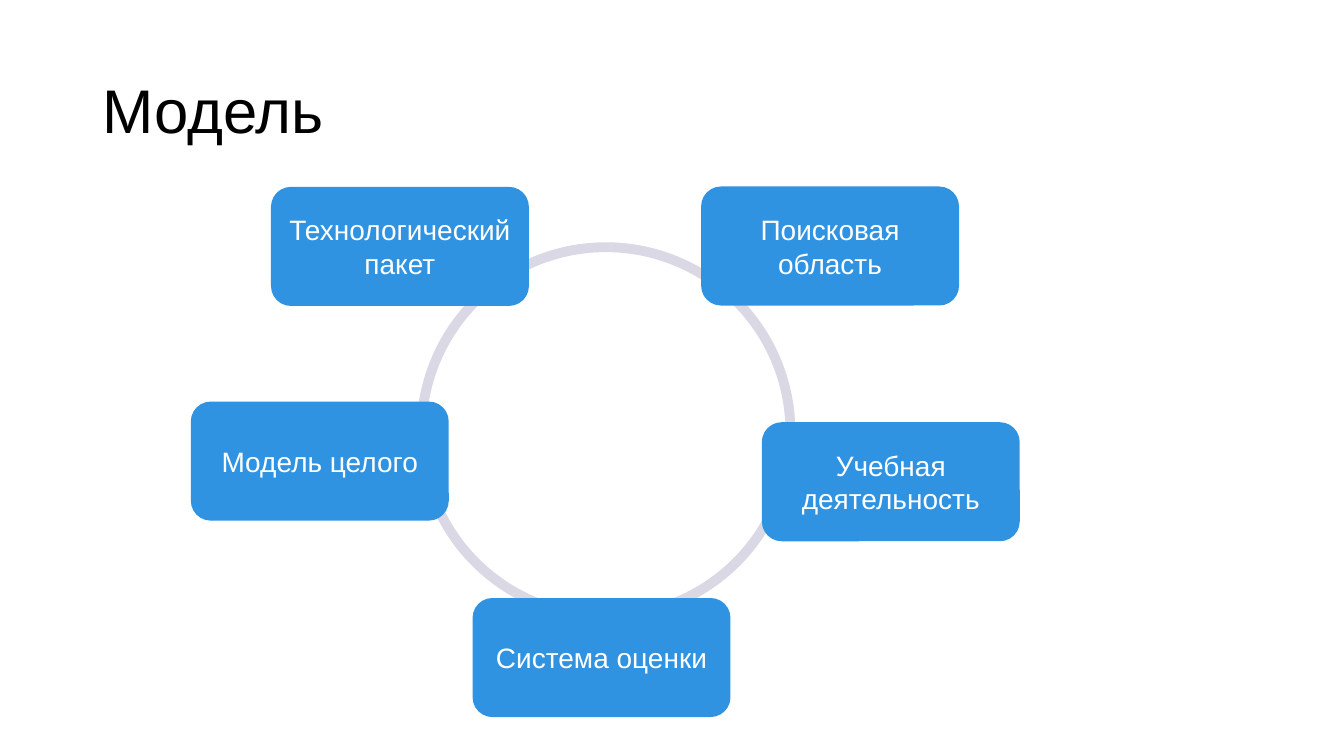
from pptx import Presentation
from pptx.dml.color import RGBColor
from pptx.enum.shapes import MSO_SHAPE
from pptx.enum.text import MSO_ANCHOR, PP_ALIGN
from pptx.util import Cm, Pt

ROUNDED = MSO_SHAPE.ROUNDED_RECTANGLE
OVAL = MSO_SHAPE.OVAL
MIDDLE = MSO_ANCHOR.MIDDLE
LEFT, CENTER = PP_ALIGN.LEFT, PP_ALIGN.CENTER

TITLE_ONLY = 5
FONT = "Arial"
BLACK, WHITE, BLUE, LILAC = "000000", "FFFFFF", "2F93E2", "D9D8E4"
STAGE_WIDTH, STAGE_HEIGHT = 6.5, 3.0

# Wording, left and top in centimetres, clockwise from the upper left
STAGES = [
    ("Технологический пакет", 6.83, 4.71),
    ("Поисковая область", 17.67, 4.7),
    ("Учебная деятельность", 19.2, 10.64),
    ("Система оценки", 11.91, 15.07),
    ("Модель целого", 4.81, 10.12),
]


def color(hex_string):
    return RGBColor.from_string(hex_string)


def write(frame, wording, size, hex_color, alignment):
    frame.word_wrap = True
    frame.vertical_anchor = MIDDLE
    paragraph = frame.paragraphs[0]
    paragraph.alignment = alignment
    run = paragraph.add_run()
    run.text = wording
    run.font.name = FONT
    run.font.size = Pt(size)
    run.font.color.rgb = color(hex_color)
    return paragraph


def add_title(slide, wording):
    title = slide.shapes.title
    title.left, title.top = Cm(2.33), Cm(1.01)
    title.width, title.height = Cm(29.21), Cm(3.68)
    heading = write(title.text_frame, wording, 44, BLACK, LEFT)
    heading.line_spacing = 0.9


def add_ring(slide, left, top, diameter):
    ring = slide.shapes.add_shape(OVAL, Cm(left), Cm(top), Cm(diameter), Cm(diameter))
    ring.shadow.inherit = False
    ring.fill.background()
    ring.line.color.rgb = color(LILAC)
    ring.line.width = Pt(7)


def add_stage(slide, wording, left, top):
    stage = slide.shapes.add_shape(
        ROUNDED, Cm(left), Cm(top), Cm(STAGE_WIDTH), Cm(STAGE_HEIGHT)
    )
    stage.shadow.inherit = False
    stage.fill.solid()
    stage.fill.fore_color.rgb = color(BLUE)
    stage.line.fill.background()
    write(stage.text_frame, wording, 20, WHITE, CENTER)


def main():
    presentation = Presentation()
    presentation.slide_width, presentation.slide_height = Cm(33.87), Cm(19.05)
    slide = presentation.slides.add_slide(presentation.slide_layouts[TITLE_ONLY])
    add_title(slide, "Модель")
    add_ring(slide, 10.62, 6.23, 9.3)
    for wording, left, top in STAGES:
        add_stage(slide, wording, left, top)
    presentation.save("out.pptx")


if __name__ == "__main__":
    main()
